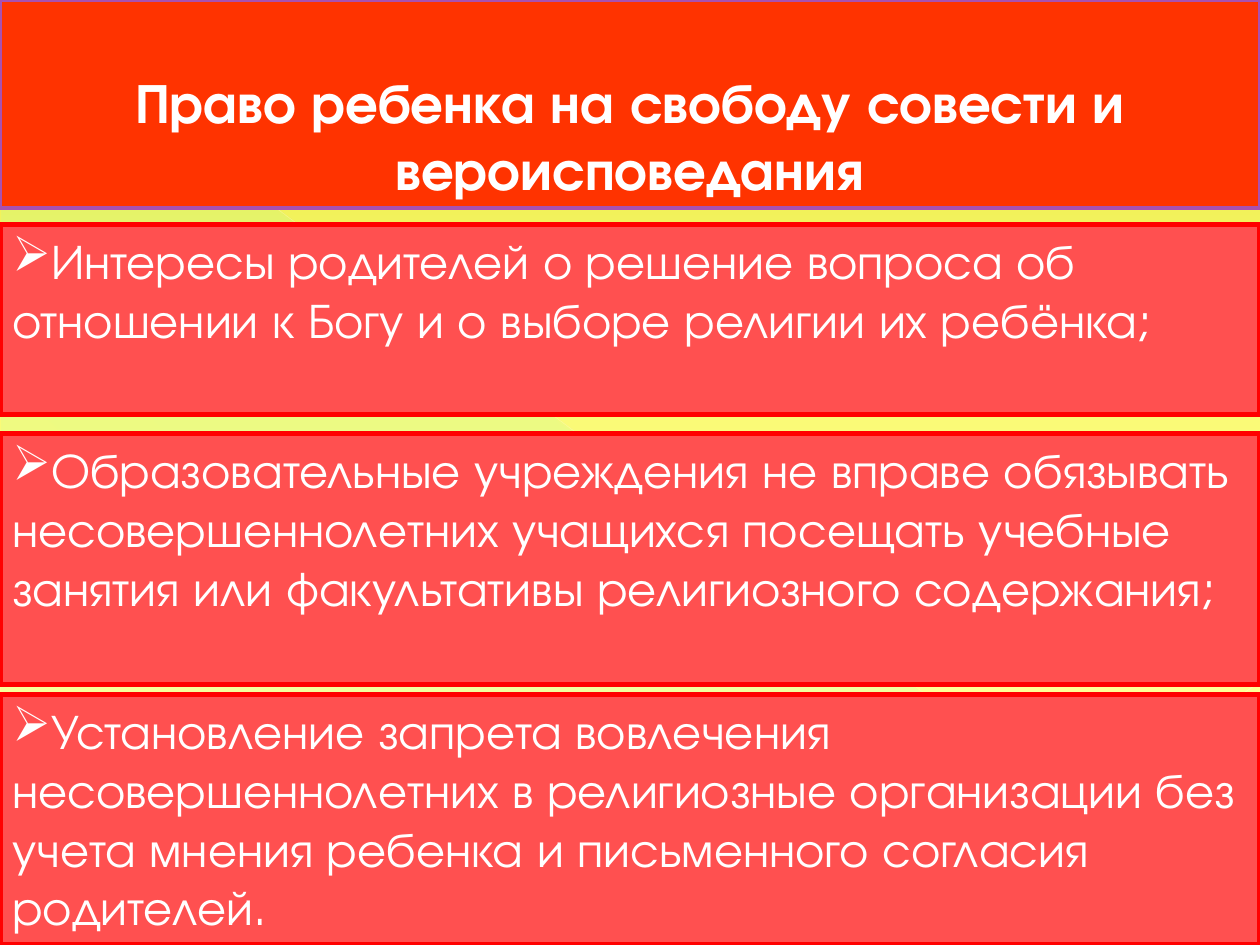
"""Build a slide on a child's right to freedom of conscience and religion."""
from dataclasses import dataclass

import pptx
import pptx.dml.color
import pptx.enum.shapes
import pptx.enum.text
import pptx.oxml
import pptx.oxml.ns
import pptx.util
from pptx.util import Inches

COLOURS = {
    "title_fill": "FF3300", "title_line": "A951B0",
    "panel_fill": "FF5050", "panel_line": "FF0000",
    "text": "FFFFFF", "glow": "66FFFF",
    "diagonal": "FFFFCF", "corner": "FFFFD4",
    "sky_top": "EAEA3F", "sky_middle": "FFFF8A", "sky_bottom": "FFFFAE",
}
FONT = "TeX Gyre Adventor"
SLIDE_WIDTH = 10
NAMESPACE = pptx.oxml.ns.nsdecls("a")


@dataclass
class Panel:
    top: float
    height: float
    text: str
    fill: str = "panel_fill"
    line: str = "panel_line"
    line_width: float = 3
    size: int = 28
    heading: bool = False


@dataclass
class Ray:
    start: tuple[float, float]
    end: tuple[float, float]
    colour: str
    width: float
    opacity: int


PANELS = [
    Panel(0, 1.65, "Право ребенка на свободу совести и вероисповедания",
          "title_fill", "title_line", 2, 32, True),
    Panel(1.78, 1.51, "Интересы родителей о решение вопроса об отношении к Богу "
          "и о выборе религии их ребёнка;"),
    Panel(3.44, 1.99, "Образовательные учреждения не вправе обязывать "
          "несовершеннолетних учащихся посещать учебные занятия или "
          "факультативы религиозного содержания;"),
    Panel(5.51, 1.99, "Установление запрета вовлечения несовершеннолетних в "
          "религиозные организации без учета мнения ребенка и письменного "
          "согласия родителей."),
]
RAYS = [
    Ray((0, 0.01), (9.99, 7.49), "diagonal", 0.39, 35),
    Ray((10, 5.41), (7.07, 7.49), "corner", 0.47, 45),
]


def colour(name: str) -> pptx.dml.color.RGBColor:
    """Return the named colour."""
    return pptx.dml.color.RGBColor.from_string(COLOURS[name])


def set_gradient(owner, stops: list[tuple[int, str, int]], angle: int) -> None:
    """Replace the solid fill inside owner with a linear gradient."""
    marks = "".join(
        f'<a:gs pos="{place * 1000}"><a:srgbClr val="{COLOURS[name]}">'
        f'<a:alpha val="{opacity * 1000}"/></a:srgbClr></a:gs>'
        for place, name, opacity in stops)
    gradient = pptx.oxml.parse_xml(
        f'<a:gradFill {NAMESPACE} rotWithShape="1"><a:gsLst>{marks}</a:gsLst>'
        f'<a:lin ang="{angle * 60000}" scaled="0"/></a:gradFill>')
    solid = owner.find(pptx.oxml.ns.qn("a:solidFill"))
    owner.replace(solid, gradient)


def draw_backdrop(page) -> None:
    """Draw the background gradient and the translucent triangle."""
    page.background.fill.solid()
    properties = page._element.cSld.bg.bgPr
    set_gradient(properties, [(0, "sky_top", 100), (60, "sky_middle", 100),
                              (100, "sky_bottom", 100)], 90)
    triangle = page.shapes.add_shape(
        pptx.enum.shapes.MSO_SHAPE.RIGHT_TRIANGLE,
        Inches(0.01), Inches(0.02), Inches(9.98), Inches(7.48))
    triangle.shadow.inherit = False
    triangle.fill.solid()
    triangle.line.fill.background()
    set_gradient(triangle._element.spPr,
                 [(0, "glow", 10), (70, "glow", 8), (100, "glow", 1)], 133)


def draw_ray(page, ray: Ray) -> None:
    """Draw a thin translucent line."""
    line = page.shapes.add_connector(
        pptx.enum.shapes.MSO_CONNECTOR.STRAIGHT,
        *(Inches(value) for value in ray.start + ray.end))
    line.line.color.rgb = colour(ray.colour)
    line.line.width = pptx.util.Pt(ray.width)
    properties = line._element.spPr
    tint = properties.find(".//" + pptx.oxml.ns.qn("a:srgbClr"))
    tint.append(pptx.oxml.parse_xml(
        f'<a:alpha {NAMESPACE} val="{ray.opacity * 1000}"/>'))
    properties.append(pptx.oxml.parse_xml(f"<a:effectLst {NAMESPACE}/>"))


def draw_panel(page, panel: Panel) -> None:
    """Draw a full-width panel holding the heading or one bulleted point."""
    box = page.shapes.add_shape(
        pptx.enum.shapes.MSO_SHAPE.RECTANGLE,
        Inches(0), Inches(panel.top), Inches(SLIDE_WIDTH), Inches(panel.height))
    box.shadow.inherit = False
    box.fill.solid()
    box.fill.fore_color.rgb = colour(panel.fill)
    box.line.color.rgb = colour(panel.line)
    box.line.width = pptx.util.Pt(panel.line_width)
    frame = box.text_frame
    frame.word_wrap = True
    anchors = pptx.enum.text.MSO_ANCHOR
    frame.vertical_anchor = anchors.BOTTOM if panel.heading else anchors.TOP
    para = frame.paragraphs[0]
    alignments = pptx.enum.text.PP_ALIGN
    para.alignment = alignments.CENTER if panel.heading else alignments.LEFT
    if not panel.heading:
        para._p.get_or_add_pPr().append(
            pptx.oxml.parse_xml(f'<a:buChar {NAMESPACE} char="➢"/>'))
    span = para.add_run()
    span.text = panel.text
    span.font.name = FONT
    span.font.size = pptx.util.Pt(panel.size)
    span.font.bold = panel.heading
    span.font.color.rgb = colour("text")


def main() -> None:
    """Assemble and save the deck."""
    deck = pptx.Presentation()
    deck.slide_width = Inches(SLIDE_WIDTH)
    deck.slide_height = Inches(7.5)
    page = deck.slides.add_slide(deck.slide_layouts[6])
    draw_backdrop(page)
    for ray in RAYS:
        draw_ray(page, ray)
    for panel in PANELS:
        draw_panel(page, panel)
    deck.save("out.pptx")


if __name__ == "__main__":
    main()
